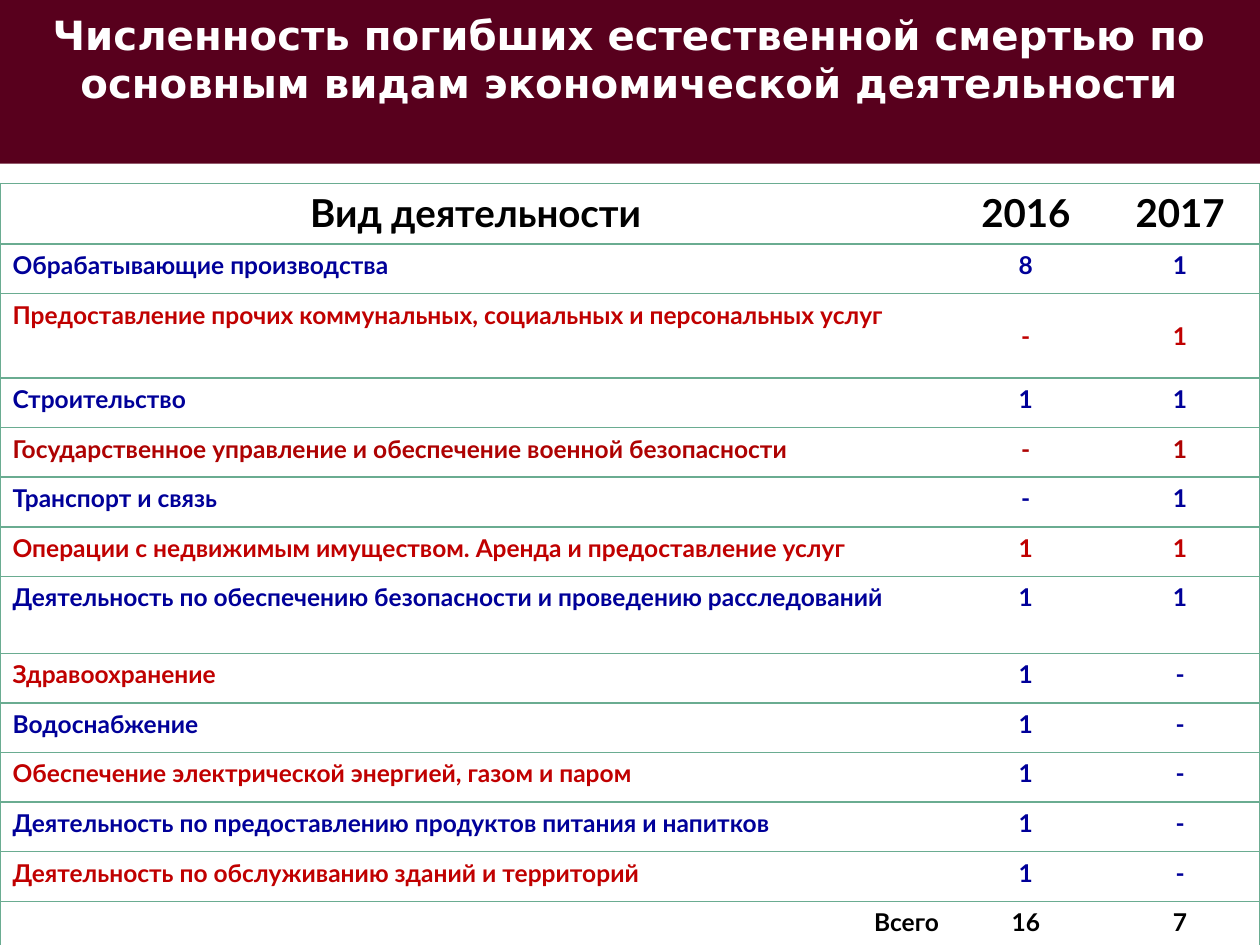
from lxml import etree
from pptx import Presentation
from pptx import util as u
from pptx.dml.color import RGBColor
from pptx.enum import shapes, text
from pptx.oxml.ns import qn

WHITE = RGBColor(0xFF, 0xFF, 0xFF)
BLACK = RGBColor(0x00, 0x00, 0x00)
MAROON = RGBColor(0x58, 0x00, 0x1D)
GREEN = RGBColor(0x6A, 0xAC, 0x91)
BLUE = RGBColor(0x00, 0x00, 0x99)
RED = RGBColor(0xC0, 0x00, 0x00)
DARK_RED = RGBColor(0xAE, 0x02, 0x02)

LEFT, CENTER, RIGHT = text.PP_ALIGN.LEFT, text.PP_ALIGN.CENTER, text.PP_ALIGN.RIGHT
TITLE = "Численность погибших естественной смертью по основным видам экономической деятельности"
COLUMN_WIDTHS = (19.18, 3, 3.22)
HEADER_HEIGHT, ROW_HEIGHT, TOTAL_HEIGHT = 1.22, 1, 0.94
TALL_ROWS = {2: 1.7, 7: 1.55}
MIDDLE_ROW = 2
ACTIVITIES = [
    ("Обрабатывающие производства", "8", "1", BLUE, BLUE),
    ("Предоставление прочих коммунальных, социальных и персональных услуг", "-", "1", RED, RED),
    ("Строительство", "1", "1", BLUE, BLUE),
    ("Государственное управление и обеспечение военной безопасности", "-", "1", DARK_RED, DARK_RED),
    ("Транспорт и связь", "-", "1", BLUE, BLUE),
    ("Операции с недвижимым имуществом. Аренда и предоставление услуг", "1", "1", RED, RED),
    ("Деятельность по обеспечению безопасности и проведению расследований", "1", "1", BLUE, BLUE),
    ("Здравоохранение", "1", "-", RED, BLUE),
    ("Водоснабжение", "1", "-", BLUE, BLUE),
    ("Обеспечение электрической энергией, газом и паром", "1", "-", RED, BLUE),
    ("Деятельность по предоставлению продуктов питания и напитков", "1", "-", BLUE, BLUE),
    ("Деятельность по обслуживанию зданий и территорий", "1", "-", RED, BLUE),
]


def write(frame, words, align, color, **font_format):
    """Put one formatted paragraph into a text frame."""
    paragraph = frame.paragraphs[0]
    paragraph.alignment = align
    run = paragraph.add_run()
    run.text = words
    run.font.color.rgb = color
    for name, value in font_format.items():
        setattr(run.font, name, value)


def rule_cell(cell, sides):
    """Draw the named sides of a cell and clear the others."""
    properties = cell._tc.get_or_add_tcPr()
    for position, side in enumerate("LRTB"):
        line = etree.Element(qn(f"a:ln{side}"), w=str(u.Pt(1)))
        if side in sides:
            fill = etree.SubElement(line, qn("a:solidFill"))
            etree.SubElement(fill, qn("a:srgbClr"), val=str(GREEN))
        else:
            etree.SubElement(line, qn("a:noFill"))
        properties.insert(position, line)


def add_title(slide, left, top, width, height):
    """Place the title band in the given box."""
    band = slide.shapes.add_shape(
        shapes.MSO_SHAPE.RECTANGLE, u.Cm(left), u.Cm(top), u.Cm(width), u.Cm(height))
    band.shadow.inherit = False
    band.fill.solid()
    band.fill.fore_color.rgb = MAROON
    band.line.fill.background()
    frame_format = {"word_wrap": True, "vertical_anchor": text.MSO_ANCHOR.TOP, "margin_top": u.Cm(0.2)}
    for name, value in frame_format.items():
        setattr(band.text_frame, name, value)
    write(band.text_frame, TITLE, CENTER, WHITE, name="DejaVu Sans", size=u.Pt(23), bold=True)


def add_activity_table(slide, left, top, width):
    """Place the table of activities with its header and total rows."""
    rows = [("Вид деятельности", "2016", "2017", BLACK, BLACK), *ACTIVITIES,
            ("Всего", "16", "7", BLACK, BLACK)]
    last = len(rows) - 1
    heights = [TALL_ROWS.get(i, ROW_HEIGHT) for i in range(len(rows))]
    heights[0], heights[last] = HEADER_HEIGHT, TOTAL_HEIGHT
    table = slide.shapes.add_table(
        len(rows), len(COLUMN_WIDTHS), u.Cm(left), u.Cm(top), u.Cm(width), u.Cm(sum(heights))).table
    table.first_row = table.horz_banding = False
    for column, share in zip(table.columns, COLUMN_WIDTHS):
        column.width = u.Cm(width * share / sum(COLUMN_WIDTHS))
    label_aligns = {0: CENTER, last: RIGHT}
    for i, (*words, label_color, value_color) in enumerate(rows):
        table.rows[i].height = u.Cm(heights[i])
        aligns = (label_aligns.get(i, LEFT), CENTER, CENTER)
        colors = (label_color, value_color, value_color)
        for j, (word, align, color) in enumerate(zip(words, aligns, colors)):
            cell = table.cell(i, j)
            cell.fill.solid()
            cell.fill.fore_color.rgb = WHITE
            rule_cell(cell, ("LTB", "TB", "RTB")[j])
            if i == MIDDLE_ROW and j:
                cell.vertical_anchor = text.MSO_ANCHOR.MIDDLE
            write(cell.text_frame, word, align, color,
                  name="Lato", size=u.Pt(14 if i else 22), bold=True)


def main():
    """Build and save the slide."""
    deck = Presentation()
    deck.slide_width, deck.slide_height = u.Cm(25.4), u.Cm(19.05)
    slide = deck.slides.add_slide(deck.slide_layouts[6])
    add_title(slide, 0, 0, 25.4, 3.3)
    add_activity_table(slide, 0, 3.7, 25.4)
    deck.save("out.pptx")


if __name__ == "__main__":
    main()
